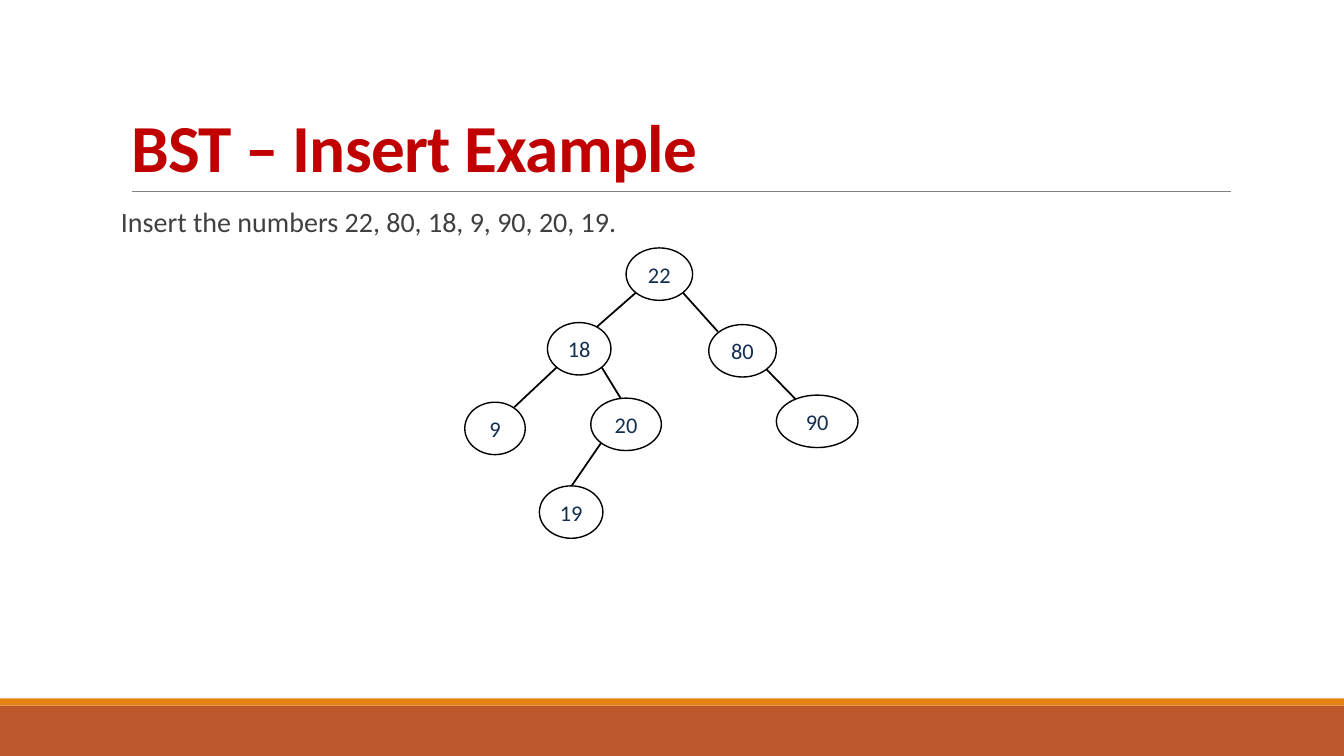
from dataclasses import dataclass

from lxml import etree
from pptx import Presentation
from pptx.dml.color import RGBColor
from pptx.enum.shapes import MSO_CONNECTOR, MSO_SHAPE
from pptx.enum.text import MSO_ANCHOR, MSO_AUTO_SIZE, PP_ALIGN
from pptx.oxml.ns import qn
from pptx.util import Pt

PX = 9144
DIAG = 0.5 ** 0.5
RECT, OVAL = MSO_SHAPE.RECTANGLE, MSO_SHAPE.OVAL
LINE = MSO_CONNECTOR.STRAIGHT
TOP, MIDDLE, BOTTOM = MSO_ANCHOR.TOP, MSO_ANCHOR.MIDDLE, MSO_ANCHOR.BOTTOM
LEFT, CENTER = PP_ALIGN.LEFT, PP_ALIGN.CENTER
NO_FIT = MSO_AUTO_SIZE.NONE


@dataclass(frozen=True)
class Theme:
    font: str = "Calibri"
    title: str = "C00000"
    body: str = "404040"
    label: str = "132E51"
    ink: str = "000000"
    paper: str = "FFFFFF"
    rule: str = "808080"
    band: str = "BD582C"
    strip: str = "E48312"
    title_size: int = 48
    body_size: int = 20
    label_size: int = 16


class Deck:
    """Draws styled elements on one slide, with lengths in hundredths of an inch."""

    def __init__(self, theme):
        self.theme = theme
        self.prs = Presentation()
        self.prs.slide_width, self.prs.slide_height = 1333 * PX, 750 * PX
        self.slide = self.prs.slides.add_slide(self.prs.slide_layouts[5])

    def label(self, shape, text, size, color, anchor, align, inset):
        frame = shape.text_frame
        frame.text = text
        frame.word_wrap = True
        frame.auto_size = NO_FIT
        frame.vertical_anchor = anchor
        frame.margin_left = frame.margin_right = inset * PX
        frame.margin_top = frame.margin_bottom = 5 * PX
        para = frame.paragraphs[0]
        para.alignment = align
        run = para.runs[0]
        run.font.name = self.theme.font
        run.font.size = Pt(size)
        run.font.color.rgb = RGBColor.from_string(color)
        return para, run

    def title(self, text, x, y, w, h):
        shape = self.slide.shapes.title
        shape.left, shape.top = x * PX, y * PX
        shape.width, shape.height = w * PX, h * PX
        theme = self.theme
        para, run = self.label(
            shape, text, theme.title_size, theme.title, BOTTOM, LEFT, 10)
        para.line_spacing = 0.85
        run.font.bold = True
        run.font._element.set("spc", "-50")

    def body(self, text, x, y, w, h):
        box = self.slide.shapes.add_textbox(x * PX, y * PX, w * PX, h * PX)
        theme = self.theme
        para, _ = self.label(
            box, text, theme.body_size, theme.body, TOP, LEFT, 0)
        para.line_spacing = 0.9
        para.space_before, para.space_after = Pt(12), Pt(2)

    def shape(self, kind, fill, x, y, w, h):
        shape = self.slide.shapes.add_shape(
            kind, x * PX, y * PX, w * PX, h * PX)
        shape.shadow.inherit = False
        shape.fill.solid()
        shape.fill.fore_color.rgb = RGBColor.from_string(fill)
        shape.line.fill.background()
        return shape

    def line(self, start, end, color, width):
        ends = [round(v * PX) for v in (*start, *end)]
        line = self.slide.shapes.add_connector(LINE, *ends)
        line.line.color.rgb = RGBColor.from_string(color)
        line.line.width = Pt(width)
        etree.SubElement(line._element.spPr, qn("a:effectLst"))

    def node(self, text, x, y, w, h):
        theme = self.theme
        oval = self.shape(OVAL, theme.paper, x, y, w, h)
        oval.line.color.rgb = RGBColor.from_string(theme.ink)
        oval.line.width = Pt(1)
        self.label(oval, text, theme.label_size, theme.label, MIDDLE, CENTER, 0)

    def edge(self, box, side, end):
        x, y, w, h = box
        start = x + w / 2 * (1 + side * DIAG), y + h / 2 * (1 + DIAG)
        self.line(start, end, self.theme.ink, 1.25)

    def tree(self, nodes):
        boxes = {}
        for key, x, y, w, root, end in nodes:
            boxes[key] = x, y, w, 52
            if root is not None:
                self.edge(boxes[root], 1 if key > root else -1, end)
            self.node(str(key), *boxes[key])


def main():
    theme = Theme()
    deck = Deck(theme)
    deck.shape(RECT, theme.band, 0, 700, 1333, 50)
    deck.shape(RECT, theme.strip, 0, 693, 1333, 7)
    deck.line((131, 190), (1221, 190), theme.rule, 0.5)
    deck.title("BST – Insert Example", 120, 31, 1100, 159)
    deck.body("Insert the numbers 22, 80, 18, 9, 90, 20, 19.",
              120, 202, 1100, 440)
    deck.tree([
        (22, 621, 246, 66, None, None),
        (80, 703, 322, 67, 22, (712, 329)),
        (18, 543, 320, 63, 22, (590, 326)),
        (9, 461, 399, 60, 18, (510, 404)),
        (90, 770, 392, 81, 80, (792, 399)),
        (20, 586, 395, 70, 18, (621, 404)),
        (19, 535, 482, 63, 20, (567, 482)),
    ])
    deck.prs.save("out.pptx")


if __name__ == "__main__":
    main()
